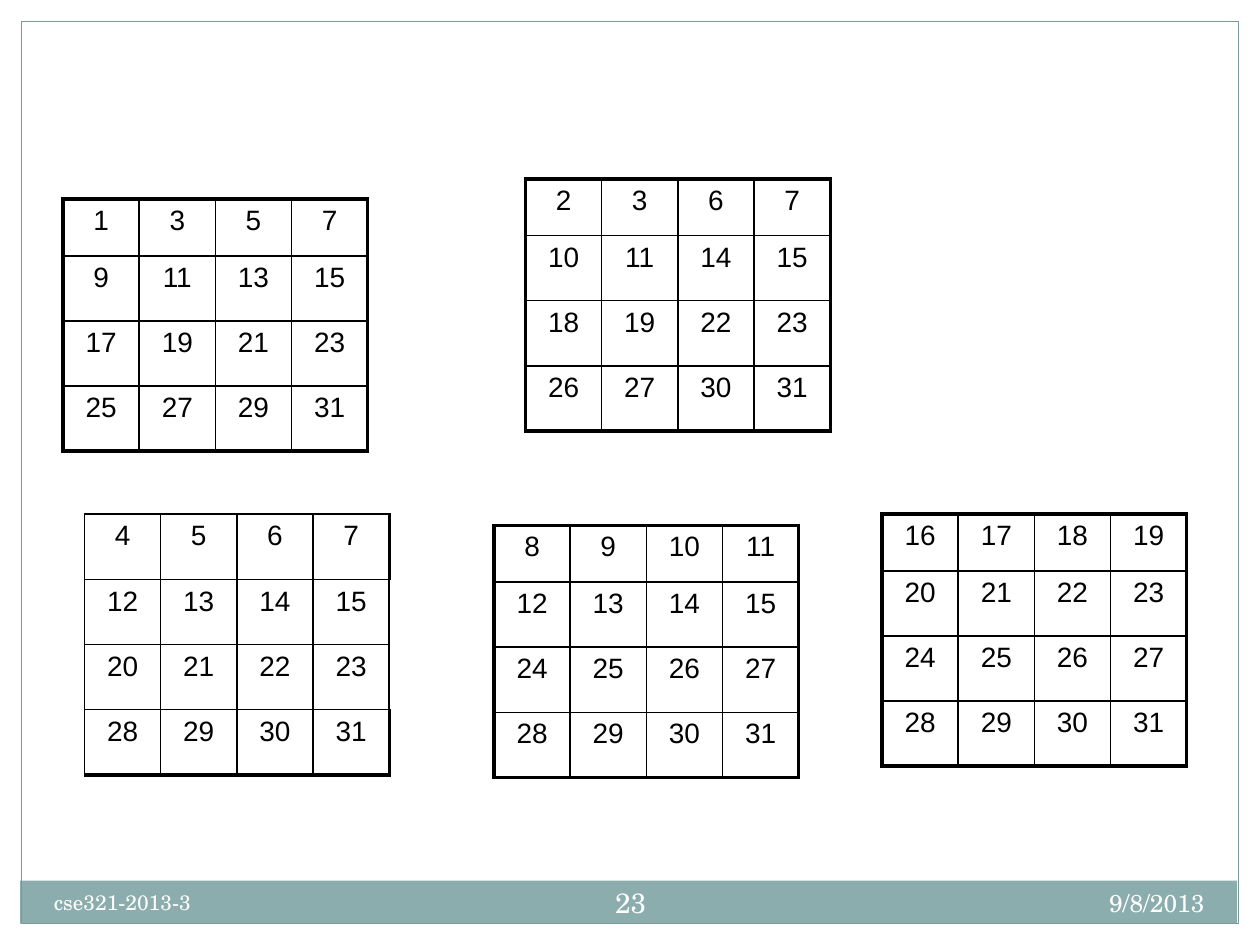
"""Build a slide of five binary number cards above a footer band."""
from dataclasses import dataclass
from typing import Optional

from lxml import etree
from pptx import Presentation
from pptx import util as u
from pptx.dml.color import RGBColor
from pptx.enum import shapes, text
from pptx.oxml import ns

COLORS = {"white": "FFFFFF", "black": "000000", "band": "8CADAE", "frame": "7C999A"}
SIZE = 4
CARD_WIDTH = 2.42
THIN, THICK = 1, 2.25


@dataclass
class Panel:
    left: float
    top: float
    width: float
    height: float
    fill: Optional[str] = None
    line: Optional[str] = None


@dataclass
class Card:
    bit: int
    left: float
    top: float
    height: float = 2.0
    first_row: float = 0.45
    framed: bool = True


@dataclass
class Label:
    wording: str
    left: float
    top: float
    width: float
    height: float
    size: int
    align: text.PP_ALIGN
    anchor: text.MSO_ANCHOR = text.MSO_ANCHOR.TOP
    margin: float = 0.1


PANELS = [
    Panel(0, 0, 10, 0.17, "white"),
    Panel(9.83, 0, 0.17, 7.5, "white"),
    Panel(0, 0, 0.17, 7.5, "white"),
    Panel(0.16, 6.99, 9.66, 0.34, "band"),
    Panel(0.17, 0.17, 9.66, 7.16, line="frame"),
]
CARDS = [
    Card(1, 0.5, 1.58),
    Card(2, 4.17, 1.42),
    Card(16, 7, 4.08),
    Card(4, 0.67, 4.08, height=2.07, first_row=0.52, framed=False),
    Card(8, 3.92, 4.17),
]
LABELS = [
    Label("9/8/2013", 6.33, 7, 3.33, 0.4, 14, text.PP_ALIGN.RIGHT),
    Label("23", 4.67, 6.92, 0.67, 0.48, 16, text.PP_ALIGN.CENTER,
          text.MSO_ANCHOR.MIDDLE, 0.05),
    Label("cse321-2013-3", 0.33, 7.01, 3.92, 0.4, 12, text.PP_ALIGN.LEFT),
]


def color(name: str) -> RGBColor:
    return RGBColor.from_string(COLORS[name])


def format_paragraph(paragraph, align, font_name: str, size: int, color_name: str) -> None:
    paragraph.alignment = align
    for run in paragraph.runs:
        run.font.name = font_name
        run.font.size = u.Pt(size)
        run.font.color.rgb = color(color_name)


def draw_panel(slide, panel: Panel) -> None:
    shape = slide.shapes.add_shape(
        shapes.MSO_SHAPE.RECTANGLE, u.Inches(panel.left), u.Inches(panel.top),
        u.Inches(panel.width), u.Inches(panel.height))
    shape.shadow.inherit = False
    if panel.fill:
        shape.fill.solid()
        shape.fill.fore_color.rgb = color(panel.fill)
    else:
        shape.fill.background()
    if panel.line:
        shape.line.color.rgb = color(panel.line)
        shape.line.width = u.Pt(0.75)
    else:
        shape.line.fill.background()


def set_borders(cell, thick_sides: dict[str, bool]) -> None:
    properties = cell._tc.get_or_add_tcPr()
    for side, thick in thick_sides.items():
        border = etree.SubElement(properties, ns.qn(f"a:ln{side}"),
                                  w=str(u.Pt(THICK if thick else THIN)))
        fill = etree.SubElement(border, ns.qn("a:solidFill"))
        etree.SubElement(fill, ns.qn("a:srgbClr"), val=COLORS["black"])


def draw_card(slide, card: Card) -> None:
    table = slide.shapes.add_table(
        SIZE, SIZE, u.Inches(card.left), u.Inches(card.top),
        u.Inches(CARD_WIDTH), u.Inches(card.height)).table
    table.first_row = table.horz_banding = False
    for column in table.columns:
        column.width = u.Inches(CARD_WIDTH / SIZE)
    for row in table.rows:
        row.height = u.Inches((card.height - card.first_row) / (SIZE - 1))
    table.rows[0].height = u.Inches(card.first_row)

    numbers = [number for number in range(32) if number & card.bit]
    last = SIZE - 1
    for index, number in enumerate(numbers):
        row, column = divmod(index, SIZE)
        cell = table.cell(row, column)
        cell.text_frame.text = str(number)
        format_paragraph(cell.text_frame.paragraphs[0], text.PP_ALIGN.CENTER,
                         "Arial", 16, "black")
        set_borders(cell, {
            "L": card.framed and column == 0,
            "R": column == last and (card.framed or row in (0, last)),
            "T": card.framed and row == 0,
            "B": row == last,
        })
        cell.fill.background()


def draw_label(slide, label: Label) -> None:
    box = slide.shapes.add_textbox(u.Inches(label.left), u.Inches(label.top),
                                   u.Inches(label.width), u.Inches(label.height))
    frame = box.text_frame
    frame.word_wrap = True
    frame.vertical_anchor = label.anchor
    frame.margin_left = frame.margin_right = u.Inches(label.margin)
    frame.margin_top = frame.margin_bottom = u.Inches(0.05)
    frame.text = label.wording
    format_paragraph(frame.paragraphs[0], label.align, "TeX Gyre Schola",
                     label.size, "white")


def main() -> None:
    presentation = Presentation()
    presentation.slide_width = u.Inches(10)
    presentation.slide_height = u.Inches(7.5)
    slide = presentation.slides.add_slide(presentation.slide_layouts.get_by_name("Blank"))
    for panel in PANELS:
        draw_panel(slide, panel)
    for card in CARDS:
        draw_card(slide, card)
    for label in LABELS:
        draw_label(slide, label)
    presentation.save("out.pptx")


if __name__ == "__main__":
    main()
